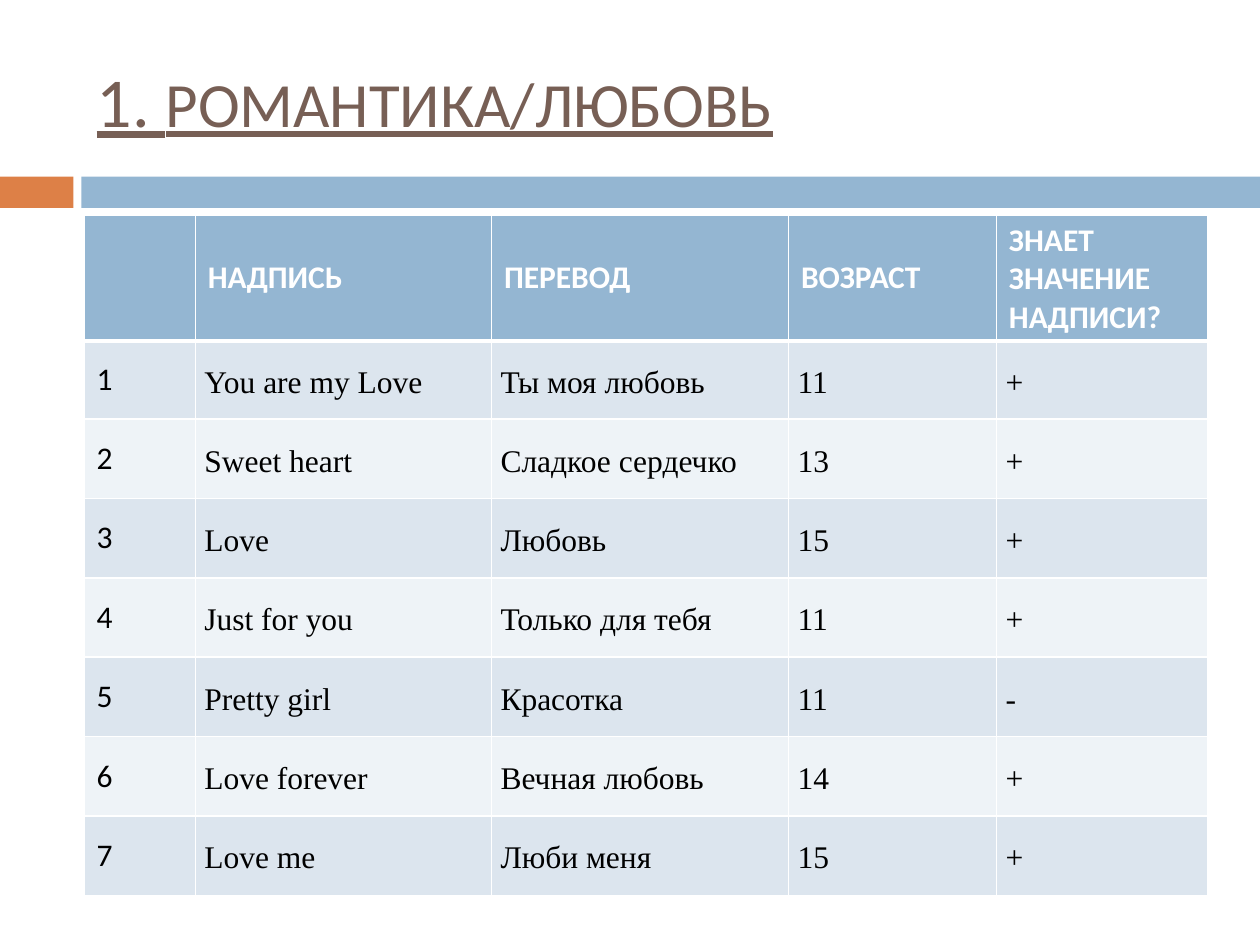
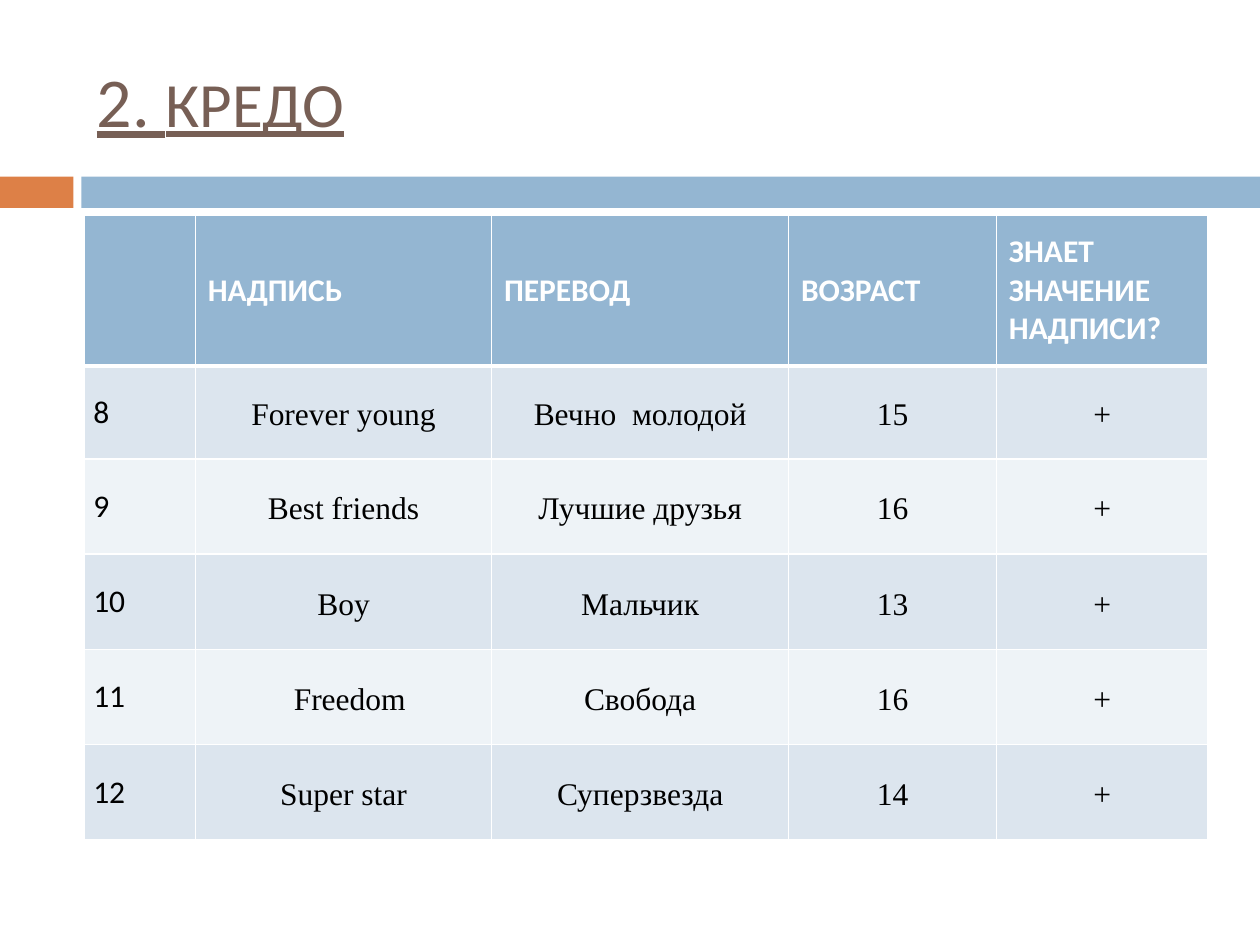
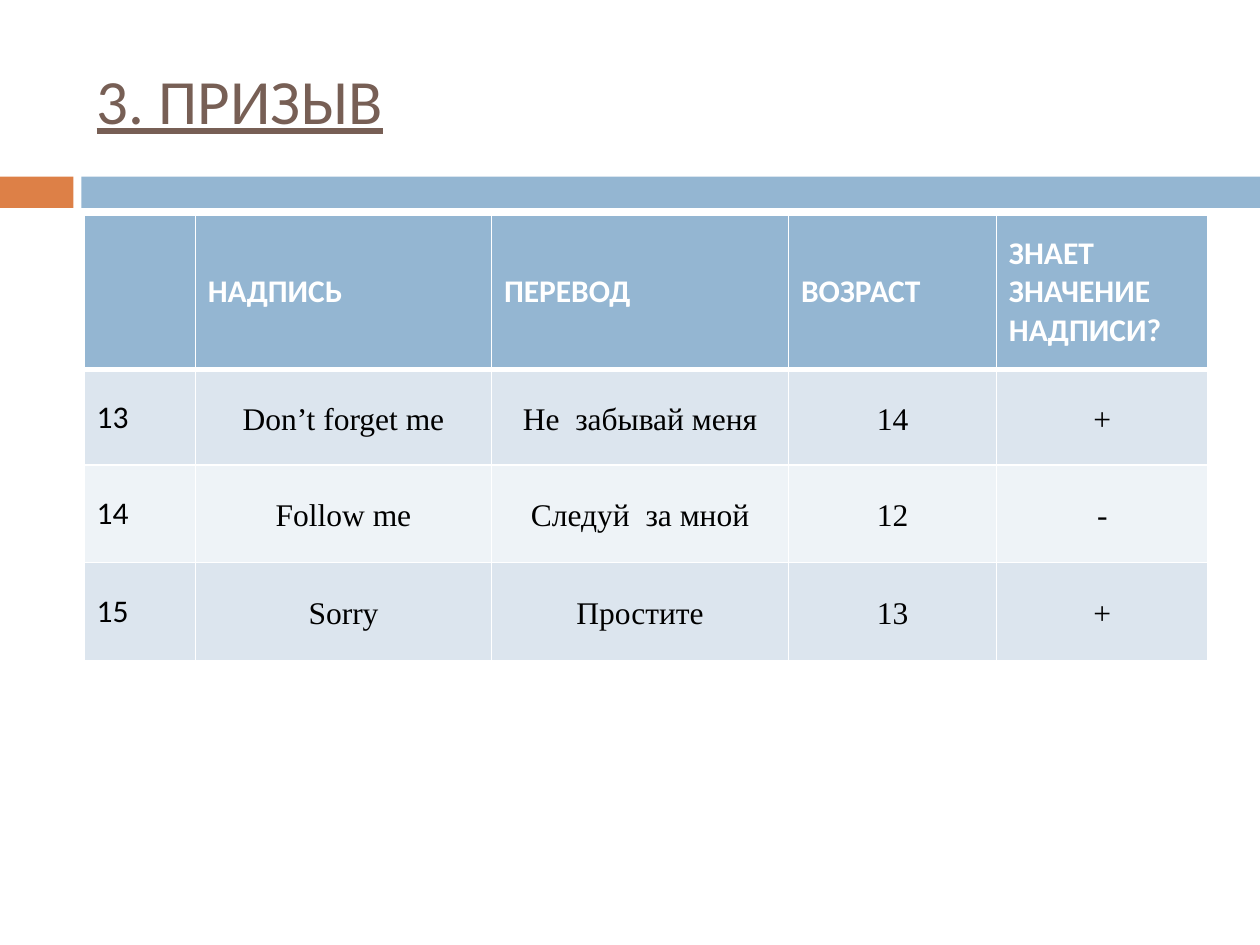
from dataclasses import dataclass
from typing import NamedTuple

import lxml.etree
import pptx
import pptx.dml.color
import pptx.enum.shapes
import pptx.enum.text
import pptx.oxml.ns
import pptx.presentation
import pptx.slide
import pptx.table
import pptx.text.text
import pptx.util

Cm = pptx.util.Cm
Pt = pptx.util.Pt
Align = pptx.enum.text.PP_ALIGN
Anchor = pptx.enum.text.MSO_ANCHOR

COLORS = {
    "title": "775F55",
    "accent": "DD8047",
    "header": "94B6D2",
    "odd": "DCE5EE",
    "even": "EEF3F7",
    "white": "FFFFFF",
    "black": "000000",
}
SANS, SERIF = "Calibri", "Times New Roman"
SLIDE_WIDTH, SLIDE_HEIGHT = 25.4, 19.05
CONTENT_LEFT, CONTENT_WIDTH = 1.7, 22.65
HEADINGS = ["", "НАДПИСЬ", "ПЕРЕВОД", "ВОЗРАСТ", "ЗНАЕТ ЗНАЧЕНИЕ НАДПИСИ?"]
COLUMN_WIDTHS = [2.24, 5.97, 5.99, 4.19, 4.26]


class Band(NamedTuple):
    left: float
    width: float
    color: str


class Insets(NamedTuple):
    side: float
    edge: float


class Entry(NamedTuple):
    inscription: str
    translation: str
    age: int
    known: str = "+"
    indent: float = 0


BANDS = [Band(0, 1.48, "accent"), Band(1.64, SLIDE_WIDTH - 1.64, "header")]
WIDE, TIGHT = Insets(0.25, 0.13), Insets(0.18, 0)


@dataclass
class Section:
    number: int
    name: str
    first_entry: int
    entries: list[Entry]
    header_height: float
    first_height: float
    row_height: float
    numeral_size: int = 40
    align: Align = Align.CENTER
    index_insets: Insets = WIDE


SECTIONS = [
    Section(1, "РОМАНТИКА/ЛЮБОВЬ", 1, [
        Entry("You are my Love", "Ты моя любовь", 11),
        Entry("Sweet heart", "Сладкое сердечко", 13),
        Entry("Love", "Любовь", 15),
        Entry("Just for you", "Только для тебя", 11),
        Entry("Pretty girl", "Красотка", 11, "-"),
        Entry("Love forever", "Вечная любовь", 14),
        Entry("Love me", "Люби меня", 15),
    ], 2.24, 1.57, 1.6, align=Align.LEFT),
    Section(2, "КРЕДО", 8, [
        Entry("Forever young", "Вечно  молодой", 15),
        Entry("Best friends", "Лучшие друзья", 16),
        Entry("Boy", "Мальчик", 13),
        Entry("Freedom", "Свобода", 16, indent=0.25),
        Entry("Super star", "Суперзвезда", 14),
    ], 3.05, 1.87, 1.92, index_insets=TIGHT),
    Section(3, "ПРИЗЫВ", 13, [
        Entry("Don’t forget me", "Не  забывай меня", 14),
        Entry("Follow me", "Следуй  за мной", 12, "-"),
        Entry("Sorry", "Простите", 13),
    ], 3.12, 1.92, 1.97, numeral_size=36),
]


def rgb(color: str) -> pptx.dml.color.RGBColor:
    return pptx.dml.color.RGBColor.from_string(COLORS[color])


def style_font(font: pptx.text.text.Font, name: str, size: int, color: str) -> None:
    font.name = name
    font.size = Pt(size)
    font.color.rgb = rgb(color)


def draw_band(slide: pptx.slide.Slide, band: Band) -> None:
    bar = slide.shapes.add_shape(
        pptx.enum.shapes.MSO_SHAPE.RECTANGLE,
        Cm(band.left), Cm(3.56), Cm(band.width), Cm(0.63))
    bar.shadow.inherit = False
    bar.fill.solid()
    bar.fill.fore_color.rgb = rgb(band.color)
    bar.line.fill.background()


def draw_title(slide: pptx.slide.Slide, section: Section) -> None:
    title = slide.shapes.add_textbox(
        Cm(CONTENT_LEFT), Cm(0.64), Cm(CONTENT_WIDTH), Cm(2.74)).text_frame
    title.word_wrap = True
    title.vertical_anchor = Anchor.MIDDLE
    parts = [(f"{section.number}. ", section.numeral_size), (section.name, 36)]
    for words, size in parts:
        run = title.paragraphs[0].add_run()
        run.text = words
        style_font(run.font, SANS, size, "title")
        run.font.underline = True


def add_borders(cell: pptx.table._Cell, top: int, bottom: int) -> None:
    """Draw white borders, with the top and bottom widths in points."""
    qn = pptx.oxml.ns.qn
    properties = cell._tc.get_or_add_tcPr()
    sides = [("a:lnL", 1), ("a:lnR", 1), ("a:lnT", top), ("a:lnB", bottom)]
    for place, (tag, width) in enumerate(sides):
        line = lxml.etree.Element(qn(tag), w=str(Pt(width)))
        fill = lxml.etree.SubElement(line, qn("a:solidFill"))
        lxml.etree.SubElement(fill, qn("a:srgbClr"), val=COLORS["white"])
        properties.insert(place, line)


def fill_cell(cell: pptx.table._Cell, words: str, fill: str, insets: Insets,
              font_name: str, color: str) -> pptx.text.text._Paragraph:
    cell.fill.solid()
    cell.fill.fore_color.rgb = rgb(fill)
    cell.vertical_anchor = Anchor.MIDDLE
    cell.margin_left = cell.margin_right = Cm(insets.side)
    cell.margin_top = cell.margin_bottom = Cm(insets.edge)
    cell.text_frame.text = words
    paragraph = cell.text_frame.paragraphs[0]
    for run in paragraph.runs:
        style_font(run.font, font_name, 18, color)
        run.font.bold = color == "white"
    return paragraph


def draw_table(slide: pptx.slide.Slide, section: Section) -> None:
    heights = [section.header_height, section.first_height]
    heights += [section.row_height] * (len(section.entries) - 1)
    table = slide.shapes.add_table(
        len(heights), len(HEADINGS), Cm(CONTENT_LEFT), Cm(4.33),
        Cm(CONTENT_WIDTH), Cm(sum(heights))).table
    for column, width in zip(table.columns, COLUMN_WIDTHS):
        column.width = Cm(width)
    for row, height in zip(table.rows, heights):
        row.height = Cm(height)

    for column, heading in enumerate(HEADINGS):
        cell = table.cell(0, column)
        fill_cell(cell, heading, "header", WIDE, SANS, "white")
        add_borders(cell, top=1, bottom=3)

    for row, entry in enumerate(section.entries, start=1):
        fill = "odd" if row % 2 else "even"
        index = str(section.first_entry + row - 1)
        fill_cell(table.cell(row, 0), index, fill, section.index_insets, SANS, "black")
        answers = [entry.inscription, entry.translation, str(entry.age), entry.known]
        for column, answer in enumerate(answers, start=1):
            paragraph = fill_cell(
                table.cell(row, column), answer, fill, TIGHT, SERIF, "black")
            paragraph.alignment = section.align
            paragraph.line_spacing = 1.15
            if column == 1 and entry.indent:
                paragraph._p.get_or_add_pPr().set("indent", str(Cm(entry.indent)))
        for cell in table.rows[row].cells:
            add_borders(cell, top=3 if row == 1 else 1, bottom=1)


def draw_section(deck: pptx.presentation.Presentation, section: Section) -> None:
    slide = deck.slides.add_slide(deck.slide_layouts[6])
    for band in BANDS:
        draw_band(slide, band)
    draw_title(slide, section)
    draw_table(slide, section)


def main() -> None:
    deck = pptx.Presentation()
    deck.slide_width, deck.slide_height = Cm(SLIDE_WIDTH), Cm(SLIDE_HEIGHT)
    for section in SECTIONS:
        draw_section(deck, section)
    deck.save("out.pptx")


if __name__ == "__main__":
    main()
